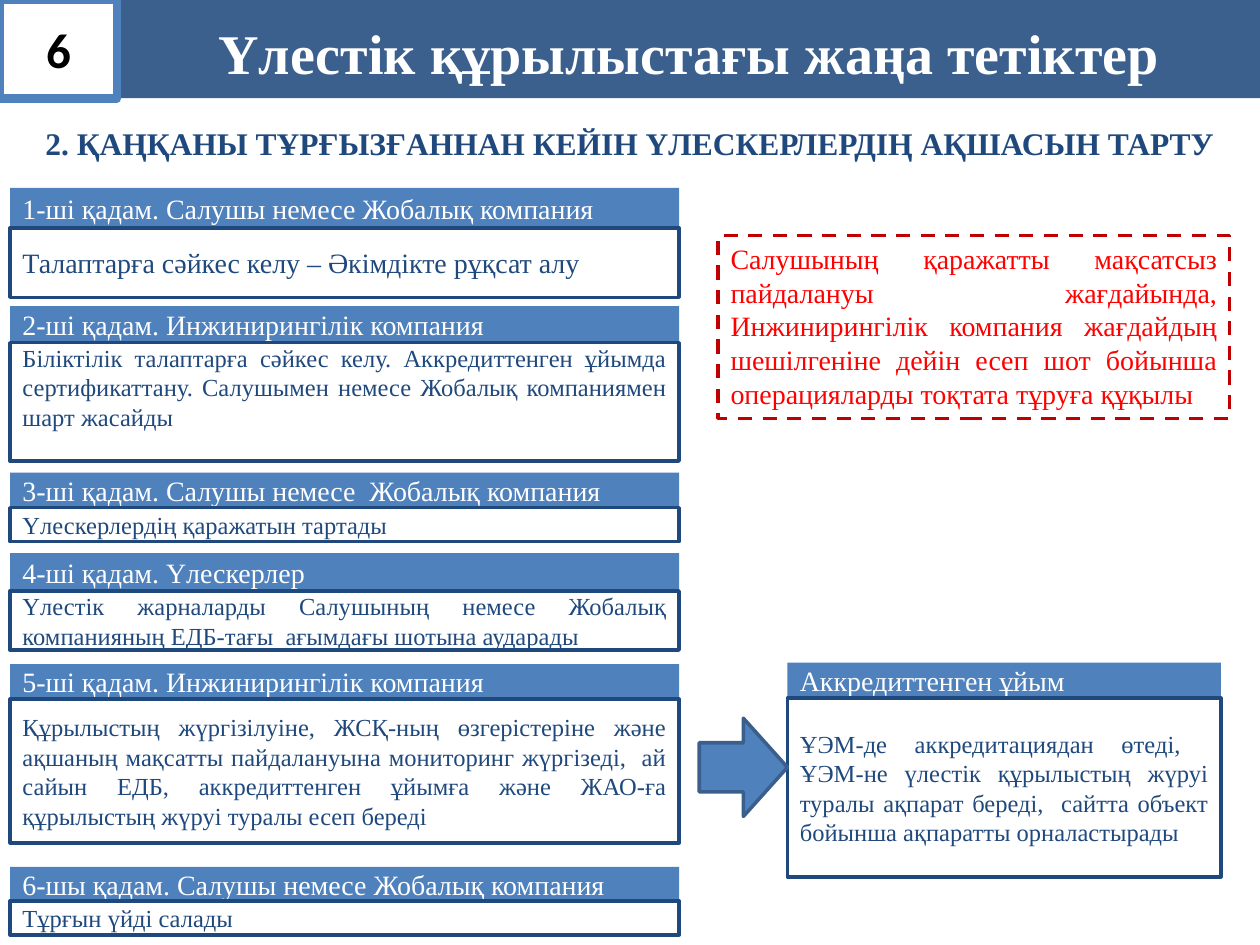
from lxml.etree import SubElement
from pptx import Presentation
from pptx.dml.color import RGBColor
from pptx.enum.dml import MSO_LINE
from pptx.enum.shapes import MSO_SHAPE
from pptx.enum.text import MSO_ANCHOR, PP_ALIGN
from pptx.oxml.ns import qn
from pptx.util import Inches, Pt

NAVY, BLUE, WHITE = "1F497D", "4F81BD", "FFFFFF"
SERIF = "Times New Roman"

NUMBER = "6"
TITLE = "Үлестік құрылыстағы жаңа тетіктер"
SUBTITLE = "2. ҚАҢҚАНЫ ТҰРҒЫЗҒАННАН КЕЙІН ҮЛЕСКЕРЛЕРДІҢ АҚШАСЫН ТАРТУ"
WARNING = ("Салушының қаражатты мақсатсыз пайдалануы жағдайында, Инжинирингілік "
           "компания жағдайдың шешілгеніне дейін есеп шот бойынша операцияларды "
           "тоқтата тұруға құқылы")

STEP_LEFT, STEP_WIDTH = 0.08, 5.31
ORG_LEFT, ORG_WIDTH = 6.25, 3.44
HEADING_HEIGHT = 0.28

# heading, body, heading top, body top, body height, body size
STEPS = [
    ("1-ші қадам. Салушы немесе Жобалық компания",
     "Талаптарға сәйкес келу – Әкімдікте рұқсат алу", 1.49, 1.81, 0.55, 16),
    ("2-ші қадам. Инжинирингілік компания",
     "Біліктілік талаптарға сәйкес келу. Аккредиттенген ұйымда сертификаттану. "
     "Салушымен немесе Жобалық компаниямен шарт жасайды", 2.43, 2.72, 0.94, 14),
    ("3-ші қадам. Салушы немесе  Жобалық компания",
     "Үлескерлердің қаражатын тартады", 3.75, 4.03, 0.27, 14),
    ("4-ші қадам. Үлескерлер",
     "Үлестік жарналарды Салушының немесе Жобалық компанияның ЕДБ-тағы  "
     "ағымдағы шотына аударады", 4.39, 4.69, 0.47, 14),
    ("5-ші қадам. Инжинирингілік компания",
     "Құрылыстың жүргізілуіне, ЖСҚ-ның өзгерістеріне және ақшаның мақсатты "
     "пайдалануына мониторинг жүргізеді,  ай сайын ЕДБ, аккредиттенген ұйымға "
     "және ЖАО-ға құрылыстың жүруі туралы есеп береді", 5.27, 5.55, 1.14, 14),
    ("6-шы қадам. Салушы немесе Жобалық компания",
     "Тұрғын үйді салады", 6.88, 7.15, 0.27, 14),
]
ORGANISATION = (
    "Аккредиттенген ұйым",
    "ҰЭМ-де аккредитациядан өтеді,  ҰЭМ-не үлестік құрылыстың жүруі туралы "
    "ақпарат береді,  сайтта объект бойынша ақпаратты орналастырады",
    5.26, 5.54, 1.42, 14)


def color(value):
    return RGBColor.from_string(value)


def write(shape, text, size, ink, align=PP_ALIGN.LEFT, bold=False, font=SERIF,
          anchor=MSO_ANCHOR.MIDDLE):
    frame = shape.text_frame
    frame.word_wrap = True
    frame.vertical_anchor = anchor
    frame.text = text
    paragraph = frame.paragraphs[0]
    paragraph.alignment = align
    style = paragraph.runs[0].font
    style.name, style.size, style.bold = font, Pt(size), bold
    style.color.rgb = color(ink)
    return paragraph


def add_box(slide, place, fill=None, line=None, width=2, kind=MSO_SHAPE.RECTANGLE):
    box = slide.shapes.add_shape(kind, *map(Inches, place))
    box.shadow.inherit = False
    if fill:
        box.fill.solid()
        box.fill.fore_color.rgb = color(fill)
    else:
        box.fill.background()
    if line:
        box.line.color.rgb = color(line)
        box.line.width = Pt(width)
    else:
        box.line.fill.background()
    return box


def add_card(slide, left, width, card):
    heading, body, heading_top, body_top, body_height, size = card
    # The first heading reaches down to its body
    height = max(HEADING_HEIGHT, body_top - heading_top)
    header = add_box(slide, (left, heading_top, width, height), BLUE)
    write(header, heading, 16, WHITE)
    panel = add_box(slide, (left, body_top, width, body_height), WHITE, NAVY)
    write(panel, body, size, NAVY, PP_ALIGN.JUSTIFY)
    return panel


def main():
    deck = Presentation()
    deck.slide_width, deck.slide_height = Inches(10), Inches(7.5)
    slide = deck.slides.add_slide(deck.slide_layouts[6])

    # Subtitle
    subtitle = slide.shapes.add_textbox(*map(Inches, (0, 0.86, 10, 0.55)))
    write(subtitle, SUBTITLE, 18, NAVY, PP_ALIGN.CENTER, bold=True)

    # Steps and the accredited organisation
    panels = [add_card(slide, STEP_LEFT, STEP_WIDTH, step) for step in STEPS]
    qualification = panels[1].text_frame
    qualification.vertical_anchor = MSO_ANCHOR.TOP
    qualification.margin_top = 0
    add_card(slide, ORG_LEFT, ORG_WIDTH, ORGANISATION)
    add_box(slide, (5.55, 5.7, 0.7, 0.78), BLUE, "3A5F8C",
            kind=MSO_SHAPE.RIGHT_ARROW)

    # Title bar, slightly transparent
    title_bar = add_box(slide, (0.94, 0, 9.06, 0.78), NAVY)
    tint = title_bar.fill._xPr.find(qn("a:solidFill"))[0]
    SubElement(tint, qn("a:alpha"), val="87000")
    title = write(title_bar, TITLE, 32, WHITE, PP_ALIGN.CENTER, bold=True)
    title.line_spacing = 1.1

    # Warning
    warning = add_box(slide, (5.7, 1.87, 4.06, 1.45), line="C00000")
    warning.line.dash_style = MSO_LINE.DASH
    write(warning, WARNING, 16, "FF0000", PP_ALIGN.JUSTIFY, anchor=MSO_ANCHOR.TOP)

    # Slide number
    number = add_box(slide, (0, 0, 0.93, 0.78), line=BLUE, width=5)
    write(number, NUMBER, 28, "000000", PP_ALIGN.CENTER, bold=True, font="Calibri")

    deck.save("out.pptx")


if __name__ == "__main__":
    main()
